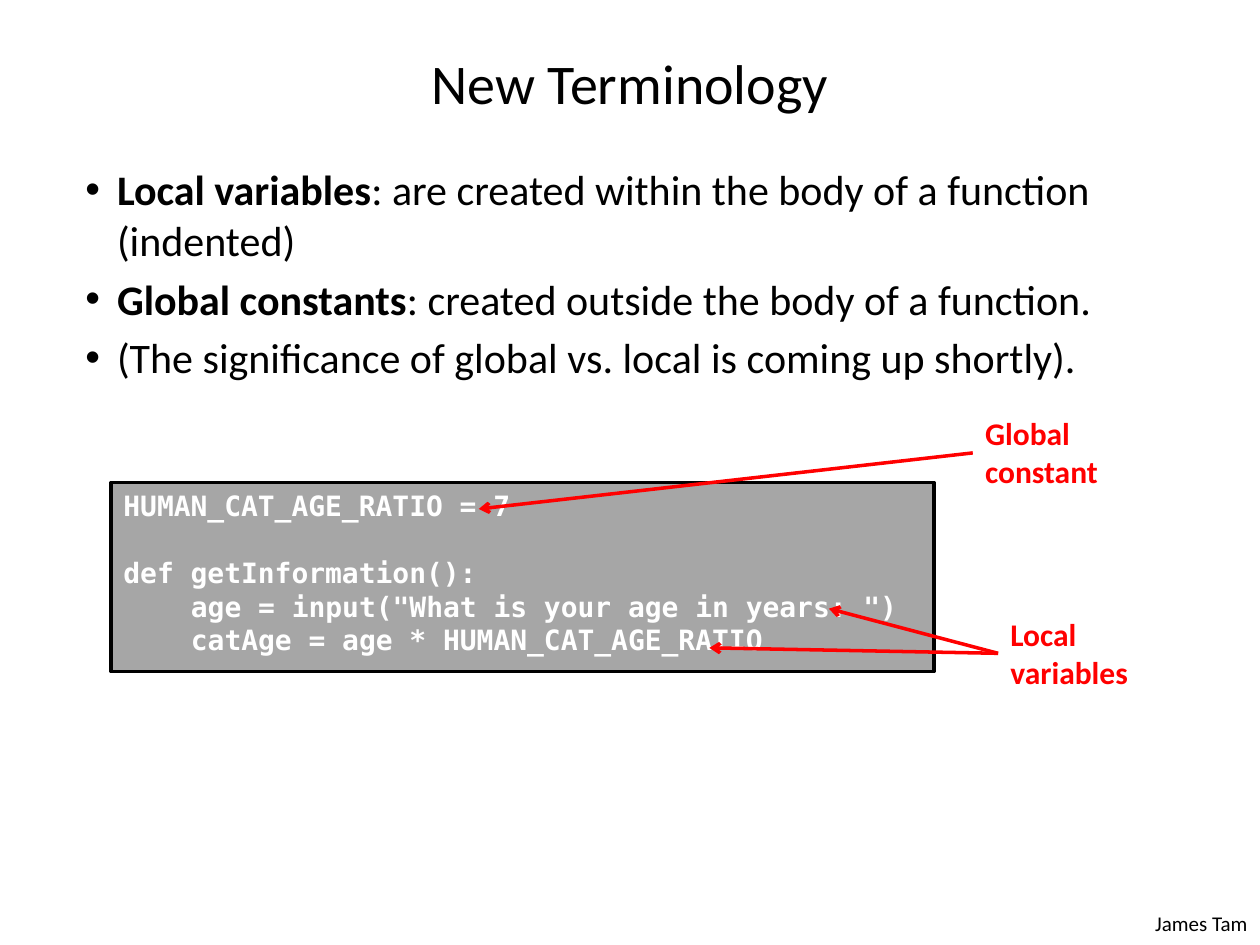
from lxml.etree import SubElement
from pptx import Presentation
from pptx.dml.color import RGBColor
from pptx.enum.shapes import MSO_CONNECTOR, MSO_SHAPE
from pptx.enum.text import MSO_ANCHOR, MSO_AUTO_SIZE, PP_ALIGN
from pptx.oxml.ns import qn
from pptx.util import Cm, Pt

BLACK = RGBColor(0x00, 0x00, 0x00)
WHITE = RGBColor(0xFF, 0xFF, 0xFF)
GRAY = RGBColor(0xA6, 0xA6, 0xA6)
RED = RGBColor(0xFF, 0x00, 0x00)


def write(p, text, size=24, font="Calibri", color=BLACK, bold=False):
    r = p.add_run()
    r.text = text
    r.font.size = Pt(size)
    r.font.name = font
    r.font.color.rgb = color
    r.font.bold = bold


def paragraphs(tf, items):
    for i, item in enumerate(items):
        yield (tf.add_paragraph() if i else tf.paragraphs[0]), item


class SlideBuilder:
    line_width = Pt(2)
    code_font = "DejaVu Sans Mono"

    def __init__(self, s):
        self.s = s

    def box(self, x, y, w, h, anchor=MSO_ANCHOR.TOP, grow=False):
        sp = self.s.shapes.add_textbox(Cm(x), Cm(y), Cm(w), Cm(h))
        tf = sp.text_frame
        tf.word_wrap = True
        tf.vertical_anchor = anchor
        if grow:
            tf.auto_size = MSO_AUTO_SIZE.SHAPE_TO_FIT_TEXT
        return sp

    def text(self, text, x, y, w, h, align=PP_ALIGN.LEFT,
             anchor=MSO_ANCHOR.TOP, grow=False, **style):
        sp = self.box(x, y, w, h, anchor, grow)
        p = sp.text_frame.paragraphs[0]
        p.alignment = align
        write(p, text, **style)
        return sp

    def bullets(self, items, x, y, w, h):
        tf = self.box(x, y, w, h).text_frame
        for p, (term, rest) in paragraphs(tf, items):
            p.space_before = Pt(4.8)
            pPr = p._p.get_or_add_pPr()
            pPr.set("marL", str(Cm(0.64)))
            pPr.set("indent", str(-Cm(0.64)))
            SubElement(pPr, qn("a:buFont")).set("typeface", "Arial")
            SubElement(pPr, qn("a:buChar")).set("char", "•")
            if term:
                write(p, term, bold=True)
            write(p, rest)

    def code(self, lines, x, y, w, h):
        sp = self.s.shapes.add_shape(MSO_SHAPE.RECTANGLE, Cm(x), Cm(y), Cm(w), Cm(h))
        sp.shadow.inherit = False
        sp.fill.solid()
        sp.fill.fore_color.rgb = GRAY
        sp.line.color.rgb = BLACK
        sp.line.width = self.line_width
        tf = sp.text_frame
        tf.word_wrap = True
        tf.vertical_anchor = MSO_ANCHOR.TOP
        for p, (text, level, gap) in paragraphs(tf, lines):
            p.alignment = PP_ALIGN.LEFT
            p.space_before = Pt(gap)
            p._p.get_or_add_pPr().set("marL", str(Cm(1.36 * level)))
            write(p, text, size=16, font=self.code_font, color=WHITE, bold=True)

    def arrow(self, label, x, y):
        c = self.s.shapes.add_connector(MSO_CONNECTOR.STRAIGHT, 0, 0, Cm(x), Cm(y))
        c.begin_connect(label, 1)
        c.line.color.rgb = RED
        c.line.width = self.line_width
        SubElement(c.line._get_or_add_ln(), qn("a:tailEnd")).set("type", "arrow")
        SubElement(c._element.spPr, qn("a:effectLst"))

    def callout(self, text, x, y, w, targets):
        label = self.text(text, x, y, w, 1.8, grow=True, size=18, color=RED, bold=True)
        for target in targets:
            self.arrow(label, *target)


def main():
    prs = Presentation()
    prs.slide_width, prs.slide_height = Cm(25.4), Cm(19.05)
    s = SlideBuilder(prs.slides.add_slide(prs.slide_layouts[6]))

    s.text("James Tam", 22.02, 18.24, 3.38, 0.76, align=PP_ALIGN.RIGHT, grow=True, size=12)
    s.text("New Terminology", 1.27, 0.76, 22.86, 1.78,
           align=PP_ALIGN.CENTER, anchor=MSO_ANCHOR.MIDDLE, size=32)
    s.bullets([
        ("Local variables", ": are created within the body of a function (indented)"),
        ("Global constants", ": created outside the body of a function."),
        ("", "(The significance of global vs. local is coming up shortly)."),
    ], 1.47, 3.18, 22.86, 15.04)
    s.code([
        ("HUMAN_CAT_AGE_RATIO = 7", 0, 0),
        ("def getInformation():", 0, 19),
        ('age = input("What is your age in years: ")', 1, 0),
        ("catAge = age * HUMAN_CAT_AGE_RATIO", 1, 0),
    ], 2.24, 9.73, 16.59, 3.81)
    s.callout("Global constant", 19.61, 8.23, 4.11, [(9.65, 10.26)])
    s.callout("Local variables", 20.12, 12.27, 3.61, [(16.71, 12.27), (14.3, 13.06)])

    prs.save("out.pptx")


if __name__ == "__main__":
    main()
